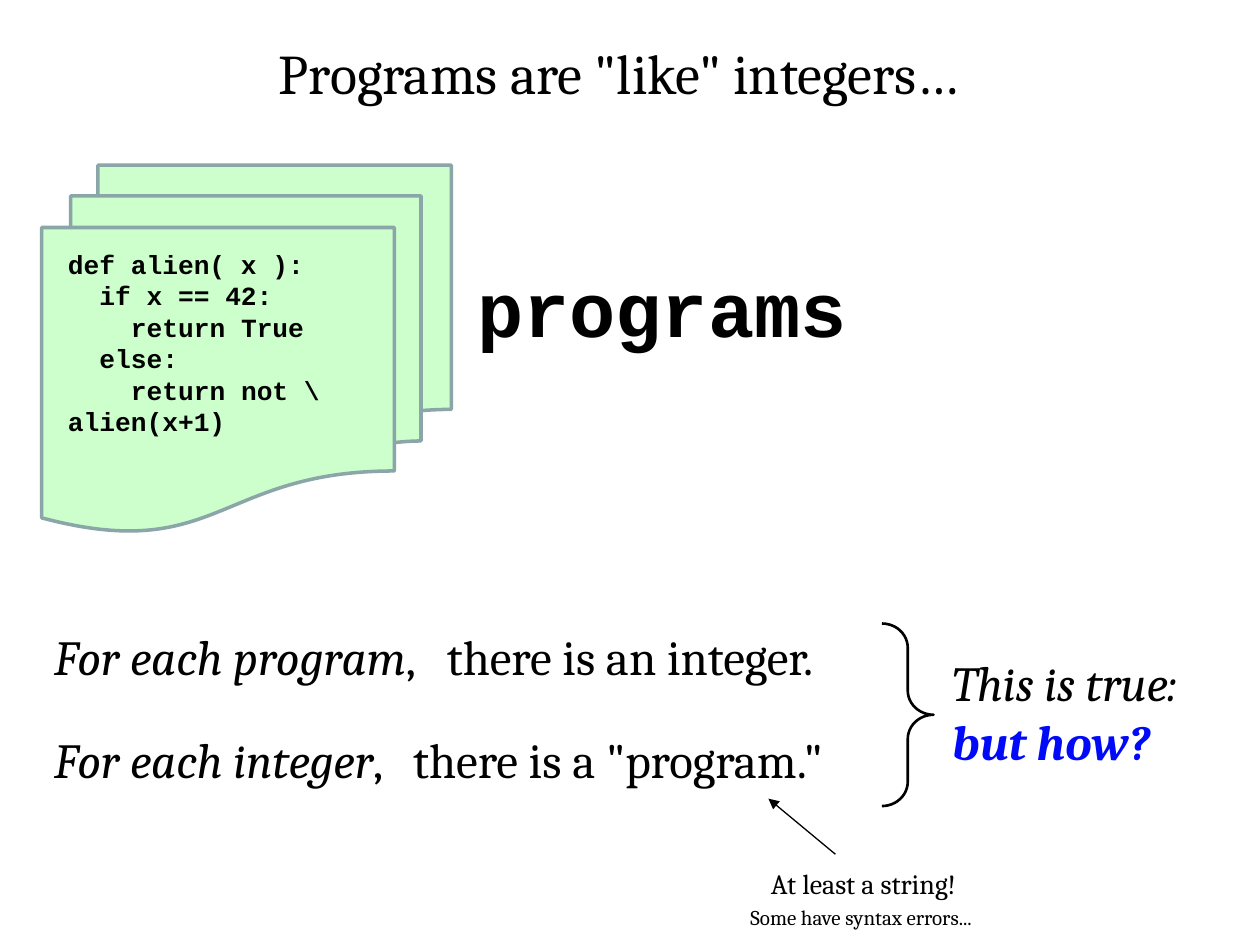
from lxml import etree
from pptx import Presentation
from pptx.dml.color import RGBColor
from pptx.enum import shapes, text
from pptx.oxml.ns import qn
from pptx.util import Cm, Pt

THEME = {
    "serif": "Cambria", "mono": "Courier New",
    "ink": "000000", "accent": "000AF9", "sheet": "CCFFCC", "edge": "8AA6A8",
    "title": 32, "code": 15, "big": 44, "body": 28, "note": 16, "small": 12,
}
CODE_STEP = Pt(18)  # two monospaced characters at the code size

TITLE = 'Programs are "like" integers…'
TITLE_AT = (1.47, 0.64, 22.02, 1.63)
CODE = [  # indent level, line
    (0, "def alien( x ):"),
    (1, "if x == 42:"),
    (2, "return True"),
    (1, "else:"),
    (2, "return not \\\valien(x+1)"),
]
CODE_AT = (1.12, 4.88, 6.55, 4.11)
CLAIMS = [  # subject, statement, tab stop, top
    ("For each program", "there is an integer.", 7.92, 12.5),
    ("For each integer", 'there is a "program."', 7.24, 14.58),
]
CLAIM_LEFT, CLAIM_WIDTH, CLAIM_HEIGHT = 0.84, 17.78, 1.45
LABELS = [  # wording, size, font, bold, place
    ("programs", "big", "mono", True, (9.37, 5.13, 8.03, 2.13)),
    ("At least a string!", "note", "serif", False, (15.29, 17.35, 4.45, 0.94)),
    ("Some have syntax errors...", "small", "serif", False, (14.88, 18.11, 5.23, 0.76)),
]
VERDICT = [("This is true:", "ink", False), ("but how?", "accent", True)]
VERDICT_AT = (18.95, 13.03, 7.26, 2.64)
SHEETS_AT = (0.84, 3.33, 8.26, 7.39)
BRACE_AT = (17.78, 12.57, 1.04, 3.68)
ARROW = (16.84, 17.22, 15.49, 16.1)


def lengths(values):
    return [Cm(value) for value in values]


def add_span(para, words, size, font="serif", color="ink", **styles):
    start = len(para.runs)
    for number, part in enumerate(words.split("\v")):
        if number:
            para.add_line_break()
        para.add_run().text = part
    for span in para.runs[start:]:
        formats = {"name": THEME[font], "size": Pt(THEME[size]), **styles}
        for name, value in formats.items():
            setattr(span.font, name, value)
        span.font.color.rgb = RGBColor.from_string(THEME[color])


def add_box(page, place, wrap=True):
    frame = page.shapes.add_textbox(*lengths(place)).text_frame
    frame.word_wrap = wrap
    return frame


def paragraphs(frame, count):
    return [frame.paragraphs[0]] + [frame.add_paragraph() for _ in range(count - 1)]


def add_outline(page, kind, place, color, width, fill=None):
    shape = page.shapes.add_shape(kind, *lengths(place))
    shape.shadow.inherit = False
    shape.line.color.rgb = RGBColor.from_string(THEME[color])
    shape.line.width = Pt(width)
    if fill:
        shape.fill.solid()
        shape.fill.fore_color.rgb = RGBColor.from_string(THEME[fill])
    else:
        shape.fill.background()
    return shape


def add_title(page):
    title = page.shapes.title
    for name, value in zip(("left", "top", "width", "height"), lengths(TITLE_AT)):
        setattr(title, name, value)
    title.text_frame.vertical_anchor = text.MSO_ANCHOR.TOP
    para = title.text_frame.paragraphs[0]
    para.alignment = text.PP_ALIGN.CENTER
    add_span(para, TITLE, "title")


def add_code(page):
    frame = add_box(page, CODE_AT)
    for para, (level, line) in zip(paragraphs(frame, len(CODE)), CODE):
        properties = para._p.get_or_add_pPr()
        properties.set("marL", "0")
        properties.set("indent", str(level * CODE_STEP))
        add_span(para, line, "code", "mono", bold=True)


def add_claims(page):
    for subject, statement, stop, top in CLAIMS:
        frame = add_box(page, (CLAIM_LEFT, top, CLAIM_WIDTH, CLAIM_HEIGHT))
        para = frame.paragraphs[0]
        tabs = etree.SubElement(para._p.get_or_add_pPr(), qn("a:tabLst"))
        etree.SubElement(tabs, qn("a:tab"), pos=str(Cm(stop)), algn="l")
        add_span(para, subject, "body", italic=True)
        add_span(para, ",\t" + statement, "body")


def add_arrow(page):
    arrow = page.shapes.add_connector(shapes.MSO_CONNECTOR.STRAIGHT, *lengths(ARROW))
    arrow.line.color.rgb = RGBColor.from_string(THEME["ink"])
    arrow.line.width = Pt(0.75)
    etree.SubElement(arrow.line._get_or_add_ln(), qn("a:tailEnd"), type="triangle")
    etree.SubElement(arrow._element.spPr, qn("a:effectLst"))


def main():
    deck = Presentation()
    deck.slide_width, deck.slide_height = Cm(25.4), Cm(19.05)
    page = deck.slides.add_slide(deck.slide_layouts[5])
    kinds = shapes.MSO_SHAPE

    add_title(page)
    add_outline(page, kinds.FLOWCHART_MULTIDOCUMENT, SHEETS_AT, "edge", 2, "sheet")
    add_code(page)
    add_claims(page)
    brace = add_outline(page, kinds.RIGHT_BRACE, BRACE_AT, "ink", 1.5)
    brace.adjustments[0] = 0.47
    verdict = add_box(page, VERDICT_AT)
    for para, (words, color, bold) in zip(paragraphs(verdict, len(VERDICT)), VERDICT):
        add_span(para, words, "body", color=color, italic=True, bold=bold)
    add_arrow(page)
    for words, size, font, bold, place in LABELS:
        para = add_box(page, place, wrap=False).paragraphs[0]
        add_span(para, words, size, font, bold=bold)

    deck.save("out.pptx")


if __name__ == "__main__":
    main()
